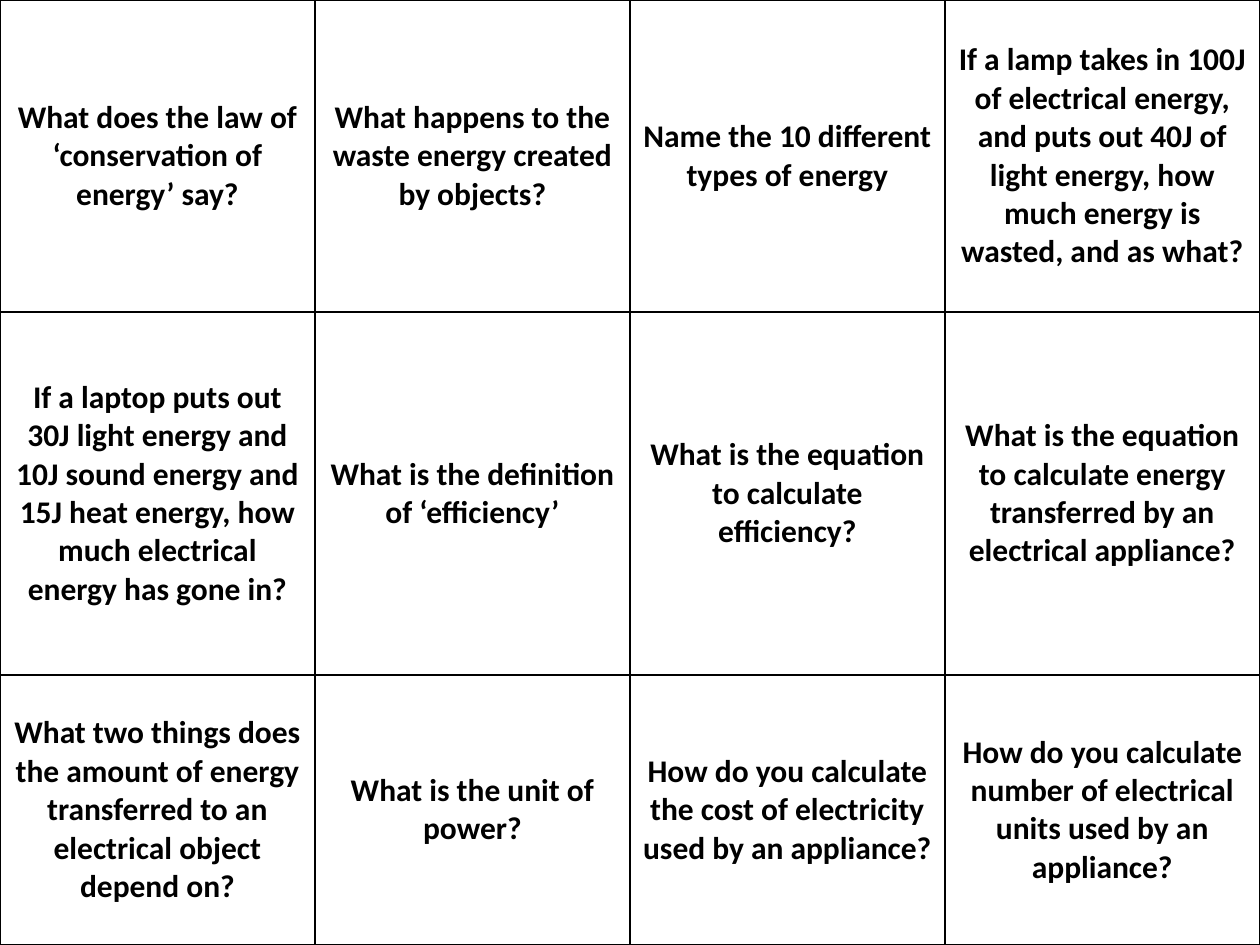
"""Build a one-slide grid of energy revision questions."""
import pptx
import pptx.dml.color
import pptx.enum.text
import pptx.oxml
import pptx.oxml.ns
import pptx.util

PX = 914400 // 126
THEME = {"font": "Calibri", "ink": "000000", "paper": "FFFFFF", "question_pt": 18, "border_pt": 1}
SLIDE_WIDTH, SLIDE_HEIGHT = 1260, 945
ROW_HEIGHTS = [312, 363, 270]
QUESTIONS = [
    [
        "What does the law of ‘conservation of energy’ say?",
        "What happens to the waste energy created by objects?",
        "Name the 10 different types of energy",
        "If a lamp takes in 100J of electrical energy, and puts out 40J of light energy, "
        "how much energy is wasted, and as what?",
    ],
    [
        "If a laptop puts out 30J light energy and 10J sound energy and 15J heat energy, "
        "how much electrical energy has gone in?",
        "What is the definition of ‘efficiency’",
        "What is the equation to calculate efficiency?",
        "What is the equation to calculate energy transferred by an electrical appliance?",
    ],
    [
        "What two things does the amount of energy transferred to an electrical object depend on?",
        "What is the unit of power?",
        "How do you calculate the cost of electricity used by an appliance?",
        "How do you calculate number of electrical units used by an appliance?",
    ],
]


def write_text(cell, text, *, size, color, bold=False, align=pptx.enum.text.PP_ALIGN.CENTER):
    cell.vertical_anchor = pptx.enum.text.MSO_ANCHOR.MIDDLE
    paragraph = cell.text_frame.paragraphs[0]
    paragraph.alignment = align
    run = paragraph.add_run()
    run.text = text
    run.font.name = THEME["font"]
    run.font.size = pptx.util.Pt(size)
    run.font.bold = bold
    run.font.color.rgb = pptx.dml.color.RGBColor.from_string(color)


def draw_borders(cell, *, color, width):
    properties = cell._tc.get_or_add_tcPr()
    for side in ("lnL", "lnR", "lnT", "lnB"):
        properties.append(pptx.oxml.parse_xml(
            f'<a:{side} {pptx.oxml.ns.nsdecls("a")} w="{pptx.util.Pt(width)}">'
            f'<a:solidFill><a:srgbClr val="{color}"/></a:solidFill></a:{side}>'
        ))


deck = pptx.Presentation()
deck.slide_width = SLIDE_WIDTH * PX
deck.slide_height = SLIDE_HEIGHT * PX
slide = deck.slides.add_slide(deck.slide_layouts[6])

question_grid = slide.shapes.add_table(
    len(QUESTIONS), len(QUESTIONS[0]), 0, 0, SLIDE_WIDTH * PX, SLIDE_HEIGHT * PX
).table
question_grid.first_row = False
question_grid.horz_banding = False

for column in question_grid.columns:
    column.width = SLIDE_WIDTH * PX // len(QUESTIONS[0])

for row_index, (height, questions) in enumerate(zip(ROW_HEIGHTS, QUESTIONS)):
    question_grid.rows[row_index].height = height * PX
    for column_index, question in enumerate(questions):
        card = question_grid.cell(row_index, column_index)
        write_text(card, question, size=THEME["question_pt"], color=THEME["ink"], bold=True)
        draw_borders(card, color=THEME["ink"], width=THEME["border_pt"])
        card.fill.solid()
        card.fill.fore_color.rgb = pptx.dml.color.RGBColor.from_string(THEME["paper"])

deck.save("out.pptx")
